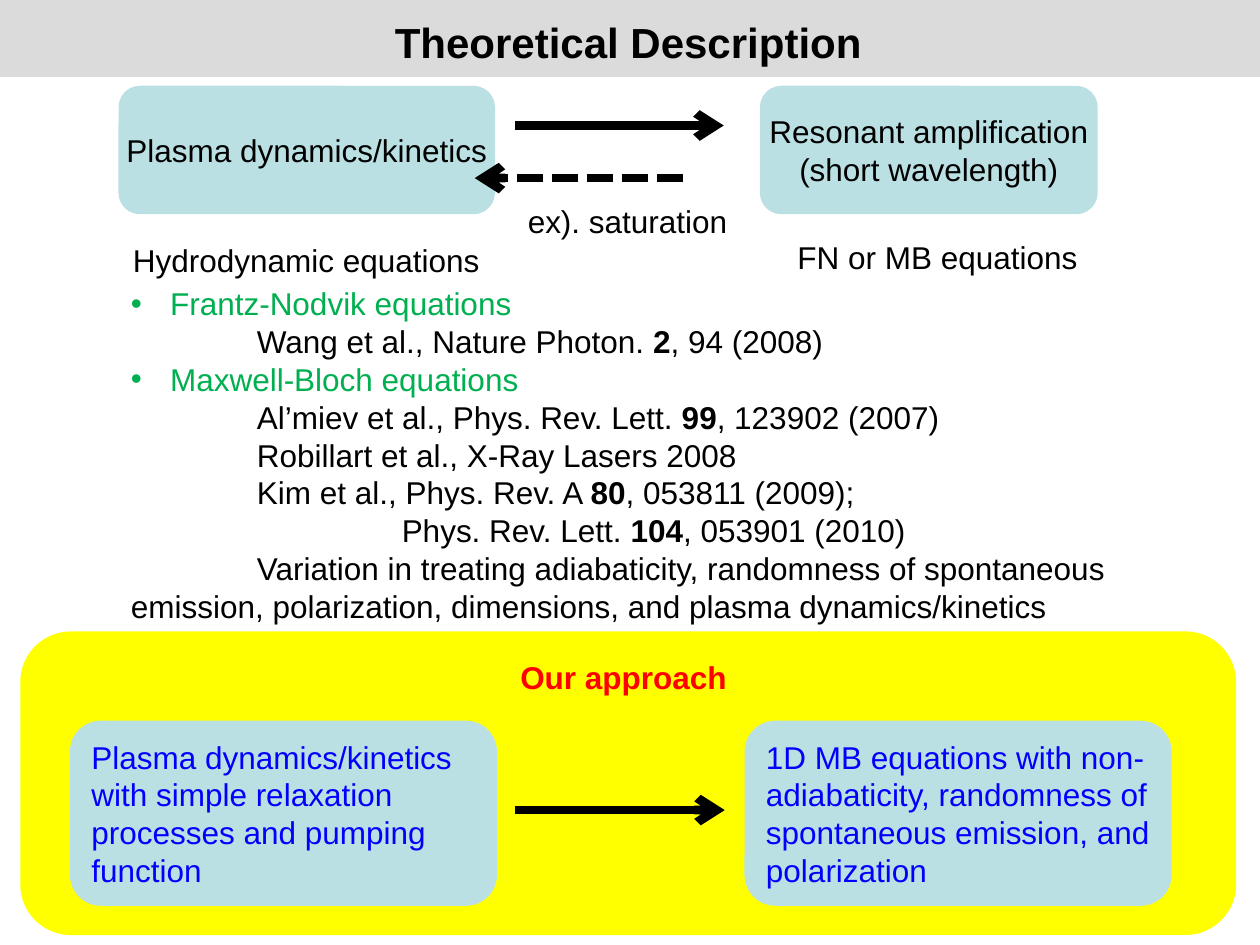
from pptx import Presentation
from pptx.dml.color import RGBColor
from pptx.enum.dml import MSO_LINE
from pptx.enum.shapes import MSO_CONNECTOR, MSO_SHAPE
from pptx.enum.text import MSO_ANCHOR, PP_ALIGN
from pptx.oxml.ns import qn
from pptx.util import Cm, Pt
from lxml.etree import SubElement

BLACK = RGBColor(0x00, 0x00, 0x00)
GREY = RGBColor(0xDB, 0xDB, 0xDB)
YELLOW = RGBColor(0xFF, 0xFF, 0x00)
PALE_BLUE = RGBColor(0xBB, 0xE0, 0xE3)
BLUE = RGBColor(0x00, 0x00, 0xFF)
RED = RGBColor(0xFF, 0x00, 0x00)
GREEN = RGBColor(0x00, 0xB0, 0x50)

LEFT, CENTER = PP_ALIGN.LEFT, PP_ALIGN.CENTER
BULLET, REFERENCE, NESTED, WRAPPED = "bullet", "reference", "nested", "wrapped"
# (left margin, first-line indent) in cm
INDENTS = {BULLET: (0.79, -0.79), REFERENCE: (2.54, 0),
           NESTED: (5.46, 0), WRAPPED: (0, 2.54)}

REFERENCES = [
    (BULLET, ["Frantz-Nodvik equations"]),
    (REFERENCE, ["Wang et al., Nature Photon. ", "2", ", 94 (2008)"]),
    (BULLET, ["Maxwell-Bloch equations"]),
    (REFERENCE, ["Al’miev et al., Phys. Rev. Lett. ", "99", ", 123902 (2007)"]),
    (REFERENCE, ["Robillart et al., X-Ray Lasers 2008"]),
    (REFERENCE, ["Kim et al., Phys. Rev. A ", "80", ", 053811 (2009);"]),
    (NESTED, ["Phys. Rev. Lett. ", "104", ", 053901 (2010)"]),
    (WRAPPED, ["Variation in treating adiabaticity, randomness of spontaneous "
               "emission, polarization, dimensions, and plasma dynamics/kinetics"]),
]


def add_run(p, text, **fmt):
    r = p.add_run()
    r.text = text
    color = fmt.pop("color", BLACK)
    for name, value in {"name": "Arial", "size": Pt(18), **fmt}.items():
        setattr(r.font, name, value)
    r.font.color.rgb = color


def fill_text(tf, lines, align=CENTER, **fmt):
    tf.word_wrap = True
    for i, line in enumerate(lines):
        p = tf.add_paragraph() if i else tf.paragraphs[0]
        p.alignment = align
        add_run(p, line, **fmt)


def add_label(s, x, y, w, h, text, align=CENTER, **fmt):
    tb = s.shapes.add_textbox(Cm(x), Cm(y), Cm(w), Cm(h))
    fill_text(tb.text_frame, [text], align, **fmt)


def add_block(s, x, y, w, h, fill, lines=(), kind=MSO_SHAPE.ROUNDED_RECTANGLE,
              inset=0, **fmt):
    sp = s.shapes.add_shape(kind, Cm(x), Cm(y), Cm(w), Cm(h))
    sp.shadow.inherit = False
    sp.fill.solid()
    sp.fill.fore_color.rgb = fill
    sp.line.fill.background()
    tf = sp.text_frame
    for name, value in {"margin_left": Cm(inset), "margin_right": 0,
                        "vertical_anchor": MSO_ANCHOR.MIDDLE}.items():
        setattr(tf, name, value)
    fill_text(tf, lines, **fmt)


def add_arrow(s, x1, x2, y, dash=None):
    cx = s.shapes.add_connector(MSO_CONNECTOR.STRAIGHT, Cm(x1), Cm(y), Cm(x2), Cm(y))
    cx.line.color.rgb = BLACK
    cx.line.width = Pt(5)
    if dash:
        cx.line.dash_style = dash
    spPr = cx._element.spPr
    SubElement(spPr.get_or_add_ln(), qn("a:tailEnd"), type="arrow")
    SubElement(spPr, qn("a:effectLst"))


def add_title_bar(s, x, y, w, h):
    add_block(s, x, y, w, h, GREY, kind=MSO_SHAPE.RECTANGLE)
    add_label(s, x + 5.72, y + 0.2, 13.89, 1.27, "Theoretical Description",
              size=Pt(24), bold=True)


def add_coupling(s, x, y, w, h):
    """Two model blocks, the arrows between them and their captions below."""
    right_w = 6.81
    add_block(s, x, y, 7.59, h, PALE_BLUE, ["Plasma dynamics/kinetics"])
    add_block(s, x + w - right_w, y, right_w, h, PALE_BLUE,
              ["Resonant amplification ", "(short wavelength)"])
    add_arrow(s, x + 8, x + 12.2, y + 0.8)
    add_arrow(s, x + 11.38, x + 7.18, y + 1.86, MSO_LINE.SQUARE_DOT)
    add_label(s, x + 8, y + 2.21, 4.57, 1.02, "ex). saturation", LEFT)
    add_label(s, x - 0.38, y + 3, 8.33, 1.02, "Hydrodynamic equations")
    add_label(s, x + 11.81, y + 2.95, 9.4, 1.02, "FN or MB equations")


def add_references(s, x, y, w, h):
    tf = s.shapes.add_textbox(Cm(x), Cm(y), Cm(w), Cm(h)).text_frame
    tf.word_wrap = True
    for i, (kind, parts) in enumerate(REFERENCES):
        p = tf.add_paragraph() if i else tf.paragraphs[0]
        pPr = p._p.get_or_add_pPr()
        for name, value in zip(("marL", "indent"), INDENTS[kind]):
            pPr.set(name, str(int(Cm(value))))
        if kind == BULLET:
            SubElement(pPr, qn("a:buFont"), typeface="Arial")
            SubElement(pPr, qn("a:buChar"), char="•")
        for j, part in enumerate(parts):  # the volume number comes second
            add_run(p, part, bold=j == 1, color=GREEN if kind == BULLET else BLACK)


def add_approach(s, x, y, w, h):
    add_block(s, x, y, w, h, YELLOW)
    add_label(s, x + 9.8, y + 0.41, 4.72, 1.02, "Our approach", color=RED, bold=True)
    steps = ["Plasma dynamics/kinetics with simple relaxation processes and "
             "pumping function",
             "1D MB equations with non-adiabaticity, randomness of spontaneous "
             "emission, and polarization"]
    for i, step in enumerate(steps):
        add_block(s, x + 1 + i * 13.6, y + 1.8, 8.61, 3.73, PALE_BLUE, [step],
                  inset=0.25, align=LEFT, color=BLUE)
    add_arrow(s, x + 9.98, x + 14.2, y + 3.6)


def main():
    prs = Presentation()
    prs.slide_width, prs.slide_height = Cm(25.4), Cm(19.05)
    s = prs.slides.add_slide(prs.slide_layouts[6])
    add_title_bar(s, 0, 0, 25.4, 1.55)
    add_coupling(s, 2.39, 1.73, 19.74, 2.59)
    add_references(s, 2.39, 5.61, 21.79, 7.19)
    add_approach(s, 0.41, 12.73, 24.51, 6.12)
    prs.save("out.pptx")


if __name__ == "__main__":
    main()
